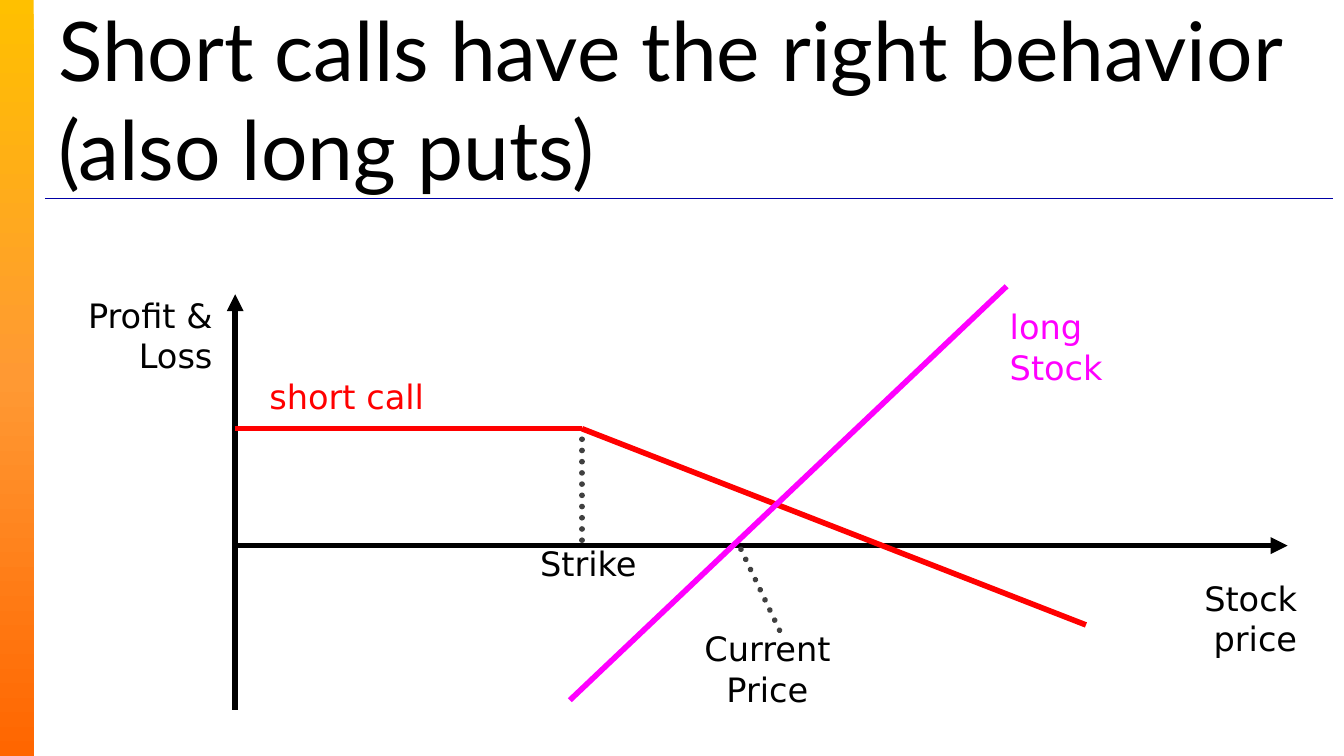
from copy import deepcopy

from lxml.etree import SubElement
from pptx import Presentation
from pptx.dml.color import RGBColor
from pptx.enum.dml import MSO_LINE
from pptx.enum.shapes import MSO_CONNECTOR, MSO_SHAPE
from pptx.enum.text import MSO_ANCHOR, MSO_AUTO_SIZE, PP_ALIGN
from pptx.oxml.ns import qn
from pptx.util import Emu, Pt

EMU_PER_PX = 4572
WIDTH, HEIGHT = 2000, 1125
BLACK, RED, MAGENTA, GREY, NAVY = "000000", "FF0000", "FF00FF", "404040", "0000A5"
AXIS_X, AXIS_Y = 350, 812
STRIKE_X, PREMIUM_Y = 866, 638


def px(length):
    return Emu(length * EMU_PER_PX)


def color(value):
    return RGBColor.from_string(value)


class PayoffPage:
    """Holds the style and the current slide, and draws its elements."""

    label_font, title_font = "DejaVu Sans", "Lato"
    label_size, title_size = 18, 44
    line_width = 3

    def __init__(self, deck):
        self.page = deck.slides.add_slide(deck.slide_layouts[6])

    def gradient_bar(self, left, top, width, height, colors):
        bar = self.page.shapes.add_shape(
            MSO_SHAPE.RECTANGLE, px(left), px(top), px(width), px(height))
        bar.shadow.inherit = False
        bar.line.fill.background()
        bar.fill.gradient()
        bar.fill.gradient_angle = 270
        first = bar._element.spPr.find(".//" + qn("a:gs"))
        first.addnext(deepcopy(first))
        for index, (stop, value) in enumerate(zip(bar.fill.gradient_stops, colors)):
            stop.position = index / (len(colors) - 1)
            stop.color.rgb = color(value)

    def line(self, start, end, value, width=line_width, dotted=False, arrow=False):
        line = self.page.shapes.add_connector(
            MSO_CONNECTOR.STRAIGHT, px(start[0]), px(start[1]), px(end[0]), px(end[1]))
        line.line.color.rgb = color(value)
        line.line.width = Pt(width)
        properties = line._element.spPr
        outline = properties.find(qn("a:ln"))
        if dotted:
            line.line.dash_style = MSO_LINE.ROUND_DOT
            outline.set("cap", "rnd")
        if arrow:
            SubElement(outline, qn("a:tailEnd"), type="triangle")
        SubElement(properties, qn("a:effectLst"))

    def text(self, left, top, width, height, words, font, size, value, align, wrap=True):
        box = self.page.shapes.add_textbox(px(left), px(top), px(width), px(height))
        frame = box.text_frame
        frame.word_wrap = wrap
        para = frame.paragraphs[0]
        para.text = words
        para.alignment = align
        para.font.name = font
        para.font.size = Pt(size)
        para.font.color.rgb = color(value)
        return box

    def title(self, left, top, width, height, words):
        box = self.text(left, top, width, height, words, self.title_font,
                        self.title_size, BLACK, PP_ALIGN.LEFT)
        box.text_frame.vertical_anchor = MSO_ANCHOR.MIDDLE
        box.fill.solid()
        box.fill.fore_color.rgb = color("FFFFFF")

    def label(self, left, top, width, height, words, value=BLACK,
              align=PP_ALIGN.RIGHT, wrap=True):
        box = self.text(left, top, width, height, words, self.label_font,
                        self.label_size, value, align, wrap)
        box.text_frame.auto_size = MSO_AUTO_SIZE.SHAPE_TO_FIT_TEXT


def main():
    deck = Presentation()
    deck.slide_width, deck.slide_height = px(WIDTH), px(HEIGHT)
    page = PayoffPage(deck)

    page.gradient_bar(0, 0, 50, HEIGHT, ["FFC000", "FF9933", "FF6600"])
    page.line((67, 295), (1984, 295), NAVY, width=0.75)
    page.title(67, 13, 1916, 266, "Short calls have the right behavior (also long puts)")

    page.line((AXIS_X, 1056), (AXIS_X, 438), BLACK, arrow=True)
    page.line((AXIS_X, AXIS_Y), (1916, AXIS_Y), BLACK, arrow=True)
    page.label(1734, 850, 216, 142, "Stock price")

    page.line((STRIKE_X, PREMIUM_Y), (1616, 930), RED)
    page.line((AXIS_X, PREMIUM_Y), (STRIKE_X, PREMIUM_Y), RED)
    page.label(379, 550, 272, 80, "short call", RED, wrap=False)

    page.line((848, 1042), (1498, 426), MAGENTA)
    page.label(1483, 446, 300, 142, "long Stock", MAGENTA, PP_ALIGN.LEFT)

    page.label(751, 798, 216, 80, "Strike")
    page.line((1160, 938), (1100, AXIS_Y), GREY, dotted=True)
    page.label(1000, 925, 284, 142, "Current Price", align=PP_ALIGN.CENTER)
    page.line((STRIKE_X, 804), (STRIKE_X, PREMIUM_Y), GREY, dotted=True)
    page.label(102, 429, 234, 114, "Profit & Loss")

    deck.save("out.pptx")


if __name__ == "__main__":
    main()
